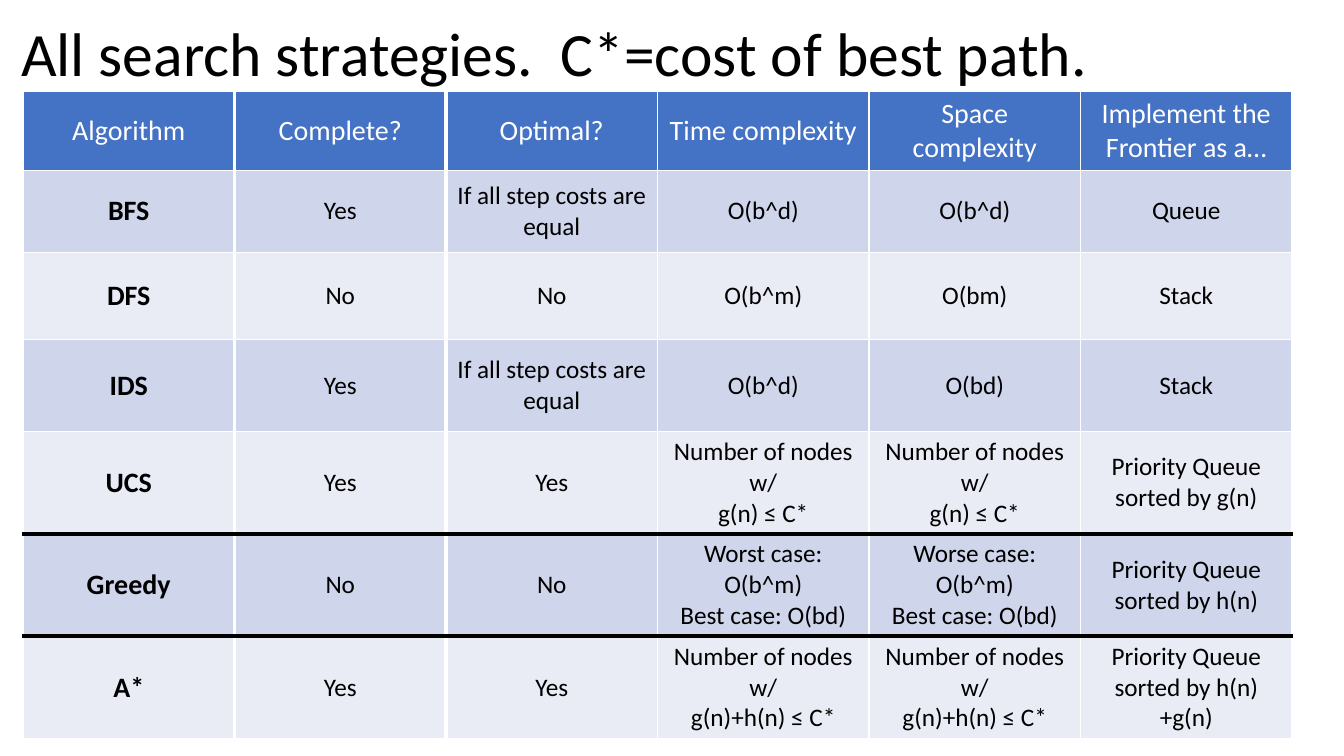
from dataclasses import dataclass

from lxml import etree
from pptx import Presentation
from pptx.dml.color import RGBColor
from pptx.enum.text import MSO_ANCHOR, MSO_AUTO_SIZE, PP_ALIGN
from pptx.oxml.ns import qn
from pptx.util import Cm, Pt

MIDDLE = MSO_ANCHOR.MIDDLE
NO_AUTOFIT = MSO_AUTO_SIZE.NONE
LEFT, CENTER = PP_ALIGN.LEFT, PP_ALIGN.CENTER
TITLE_ONLY = 5


@dataclass(frozen=True)
class Theme:
    font: str = "Calibri"
    black: str = "000000"
    white: str = "FFFFFF"
    header: str = "4472C4"
    bands: tuple = ("CFD5EA", "E9EBF5")
    title_size: int = 44
    label_size: int = 20
    body_size: int = 18
    thin: int = 1
    thick: int = 3


theme = Theme()

TITLE = "All search strategies.  C*=cost of best path."
STRATEGIES = [
    ["Algorithm", "Complete?", "Optimal?", "Time complexity", "Space complexity",
     "Implement the Frontier as a…"],
    ["BFS", "Yes", "If all step costs are equal", "O(b^d)", "O(b^d)", "Queue"],
    ["DFS", "No", "No", "O(b^m)", "O(bm)", "Stack"],
    ["IDS", "Yes", "If all step costs are equal", "O(b^d)", "O(bd)", "Stack"],
    ["UCS", "Yes", "Yes", "Number of nodes w/\ng(n) ≤ C*", "Number of nodes w/\ng(n) ≤ C*",
     "Priority Queue sorted by g(n)"],
    ["Greedy", "No", "No", "Worst case: O(b^m)\nBest case: O(bd)",
     "Worse case: O(b^m)\nBest case: O(bd)", "Priority Queue sorted by h(n)"],
    ["A*", "Yes", "Yes", "Number of nodes w/\ng(n)+h(n) ≤ C*",
     "Number of nodes w/\ng(n)+h(n) ≤ C*", "Priority Queue sorted by h(n)+g(n)"],
]
ROW_HEIGHTS = [1.96, 2.06, 2.21, 2.31, 2.58, 2.58, 2.58]
COLUMN_WIDTH = 5.33
THICK_AFTER_COLUMNS = (0, 1)
BLACK_BELOW_ROWS = (4, 5)


def style_text(text_frame, size, color, align, bold=False):
    for para in text_frame.paragraphs:
        para.alignment = align
        for span in para.runs:
            span.font.name = theme.font
            span.font.size = Pt(size)
            span.font.bold = bold
            span.font.color.rgb = RGBColor.from_string(color)


def add_border(cell, side, color, width):
    """Draw one cell edge; side is L, R, T or B, added in that order."""
    line = etree.SubElement(cell._tc.get_or_add_tcPr(), qn(f"a:ln{side}"), w=str(Pt(width)))
    fill = etree.SubElement(line, qn("a:solidFill"))
    etree.SubElement(fill, qn("a:srgbClr"), val=color)


deck = Presentation()
deck.slide_width, deck.slide_height = Cm(33.87), Cm(19.05)
page = deck.slides.add_slide(deck.slide_layouts[TITLE_ONLY])

title = page.shapes.title
title.left, title.top, title.width, title.height = Cm(0.28), Cm(0.23), Cm(27.79), Cm(2.41)
title.text_frame.text = TITLE
title.text_frame.auto_size = NO_AUTOFIT
title.text_frame.vertical_anchor = MIDDLE
title.text_frame.paragraphs[0].line_spacing = 0.9
style_text(title.text_frame, theme.title_size, theme.black, LEFT)

column_count = len(STRATEGIES[0])
table = page.shapes.add_table(
    len(STRATEGIES), column_count, Cm(0.58), Cm(2.31),
    Cm(COLUMN_WIDTH * column_count), Cm(sum(ROW_HEIGHTS))).table
for column in table.columns:
    column.width = Cm(COLUMN_WIDTH)

for row, texts in enumerate(STRATEGIES):
    table.rows[row].height = Cm(ROW_HEIGHTS[row])
    for column, text in enumerate(texts):
        cell = table.cell(row, column)
        cell.text_frame.text = text
        cell.vertical_anchor = MIDDLE

        is_header, is_label = row == 0, column == 0
        style_text(cell.text_frame,
                   theme.label_size if is_header or is_label else theme.body_size,
                   theme.white if is_header else theme.black,
                   CENTER, bold=is_label and not is_header)

        for side, before in (("L", column - 1), ("R", column)):
            width = theme.thick if before in THICK_AFTER_COLUMNS else theme.thin
            add_border(cell, side, theme.white, width)
        for side, above in (("T", row - 1), ("B", row)):
            if above in BLACK_BELOW_ROWS:
                add_border(cell, side, theme.black, theme.thick)
            else:
                add_border(cell, side, theme.white, theme.thin)

        cell.fill.solid()
        cell.fill.fore_color.rgb = RGBColor.from_string(
            theme.header if is_header else theme.bands[(row - 1) % 2])

deck.save("out.pptx")
